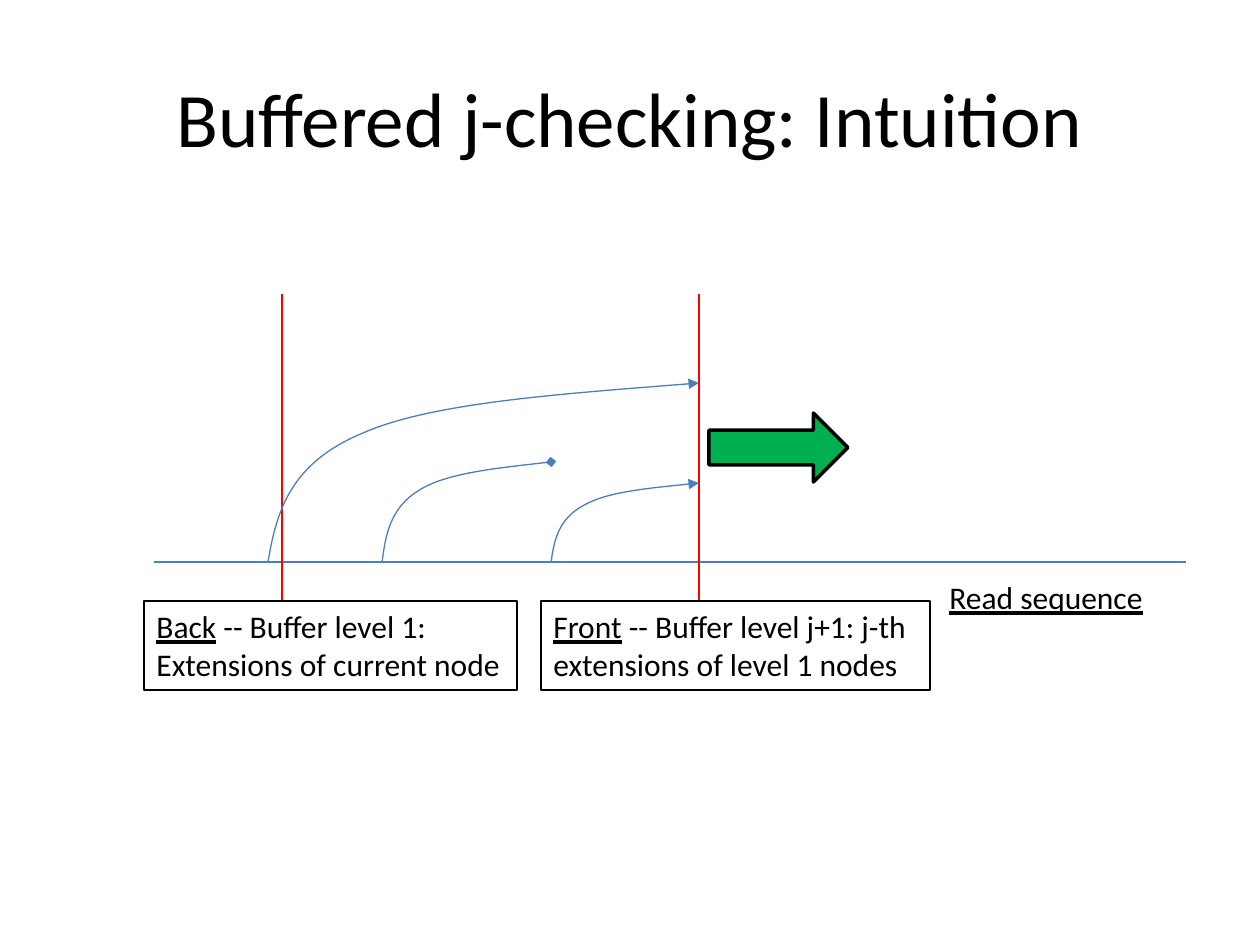
from lxml import etree
from pptx import Presentation, util as u
from pptx.dml.color import RGBColor
from pptx.enum import shapes, text
from pptx.oxml.ns import qn

PX = 914400 / 126  # EMU in one px
BLACK = RGBColor(0x00, 0x00, 0x00)
BLUE = RGBColor(0x4B, 0x7E, 0xBC)
RED = RGBColor(0xFF, 0x00, 0x00)
GREEN = RGBColor(0x00, 0xB0, 0x50)

# Content: each text line is a list of (words, underlined)
TITLE = [[("Buffered j-checking: Intuition", False)]]
AXIS = [[("Read sequence", True)]]
BOXES = [
    ((144, 601, 373, 89), [[("Back", True), (" -- Buffer level 1:", False)],
                           [("Extensions of current node", False)]]),
    ((541, 601, 389, 89), [[("Front", True), (" -- Buffer level j+1: j-th", False)],
                           [("extensions of level 1 nodes", False)]]),
]
LINES = [  # start, end, colour
    ((154, 562), (1186, 562), BLUE),
    ((699, 294), (699, 601), RED),
    ((282, 294), (282, 601), RED),
]
ARCS = [  # start, end, head
    ((268, 562), (699, 383), "triangle"),
    ((551, 563), (699, 483), "triangle"),
    ((382, 563), (551, 462), "diamond"),
]
# Shared curve: shares of the way across and up, two Bezier spans
BEND = [(0.02, 0.28), (0.05, 0.55), (0.22, 0.72),
        (0.38, 0.89), (0.69, 0.94), (1, 1)]
ARROW = (709, 413, 139, 69)


def emu(*vals):
    return [round(v * PX) for v in vals]


def style(shape, color, width=0.75):
    shape.line.color.rgb = color
    shape.line.width = u.Pt(width)


def write(shape, lines, size=18, align=text.PP_ALIGN.LEFT, **form):
    frame = shape.text_frame
    for key, val in form.items():
        setattr(frame, key, val)
    for num, line in enumerate(lines):
        para = frame.paragraphs[0] if num == 0 else frame.add_paragraph()
        para.alignment = align
        for words, under in line:
            run = para.add_run()
            run.text = words
            look = {"name": "Calibri", "size": u.Pt(size), "underline": under}
            for key, val in look.items():
                setattr(run.font, key, val)
            run.font.color.rgb = BLACK


def add_line(start, end, color):
    line = slide.shapes.add_connector(shapes.MSO_CONNECTOR.STRAIGHT,
                                      *emu(*start, *end))
    style(line, color)
    etree.SubElement(line._element.spPr, qn("a:effectLst"))


def add_arc(start, end, head):
    (x, y), (right, top) = start, end
    pts = [(x + (right - x) * a, y + (top - y) * b) for a, b in BEND]
    form = slide.shapes.build_freeform(*emu(x, y))
    form.add_line_segments([emu(*pt) for pt in pts], close=False)
    arc = form.convert_to_shape()
    arc.shadow.inherit = False
    arc.fill.background()
    style(arc, BLUE)
    # Turn each three straight segments into one Bezier span
    segs = list(arc._element.iter(qn("a:lnTo")))
    for num in range(0, len(segs), 3):
        span = etree.Element(qn("a:cubicBezTo"))
        segs[num].addprevious(span)
        for seg in segs[num:num + 3]:
            span.append(seg[0])
            seg.getparent().remove(seg)
    etree.SubElement(arc.line._get_or_add_ln(), qn("a:tailEnd"), type=head)


prs = Presentation()
prs.slide_width, prs.slide_height = emu(1260, 945)
slide = prs.slides.add_slide(prs.slide_layouts[6])

# Title
box = slide.shapes.add_textbox(*emu(63, 38, 1134, 157))
write(box, TITLE, 44, text.PP_ALIGN.CENTER, word_wrap=True,
      vertical_anchor=text.MSO_ANCHOR.MIDDLE)

# Read axis and buffer limits
for item in LINES:
    add_line(*item)
box = slide.shapes.add_textbox(*emu(937, 572, 222, 50))
write(box, AXIS, word_wrap=False)

# Extensions
for item in ARCS:
    add_arc(*item)

# Buffer labels
for place, lines in BOXES:
    box = slide.shapes.add_shape(shapes.MSO_SHAPE.RECTANGLE, *emu(*place))
    box.shadow.inherit = False
    box.fill.background()
    style(box, BLACK)
    write(box, lines, word_wrap=False, vertical_anchor=text.MSO_ANCHOR.TOP)

# Direction of reading
arrow = slide.shapes.add_shape(shapes.MSO_SHAPE.RIGHT_ARROW, *emu(*ARROW))
arrow.shadow.inherit = False
arrow.fill.solid()
arrow.fill.fore_color.rgb = GREEN
style(arrow, BLACK, 2)

prs.save("out.pptx")
